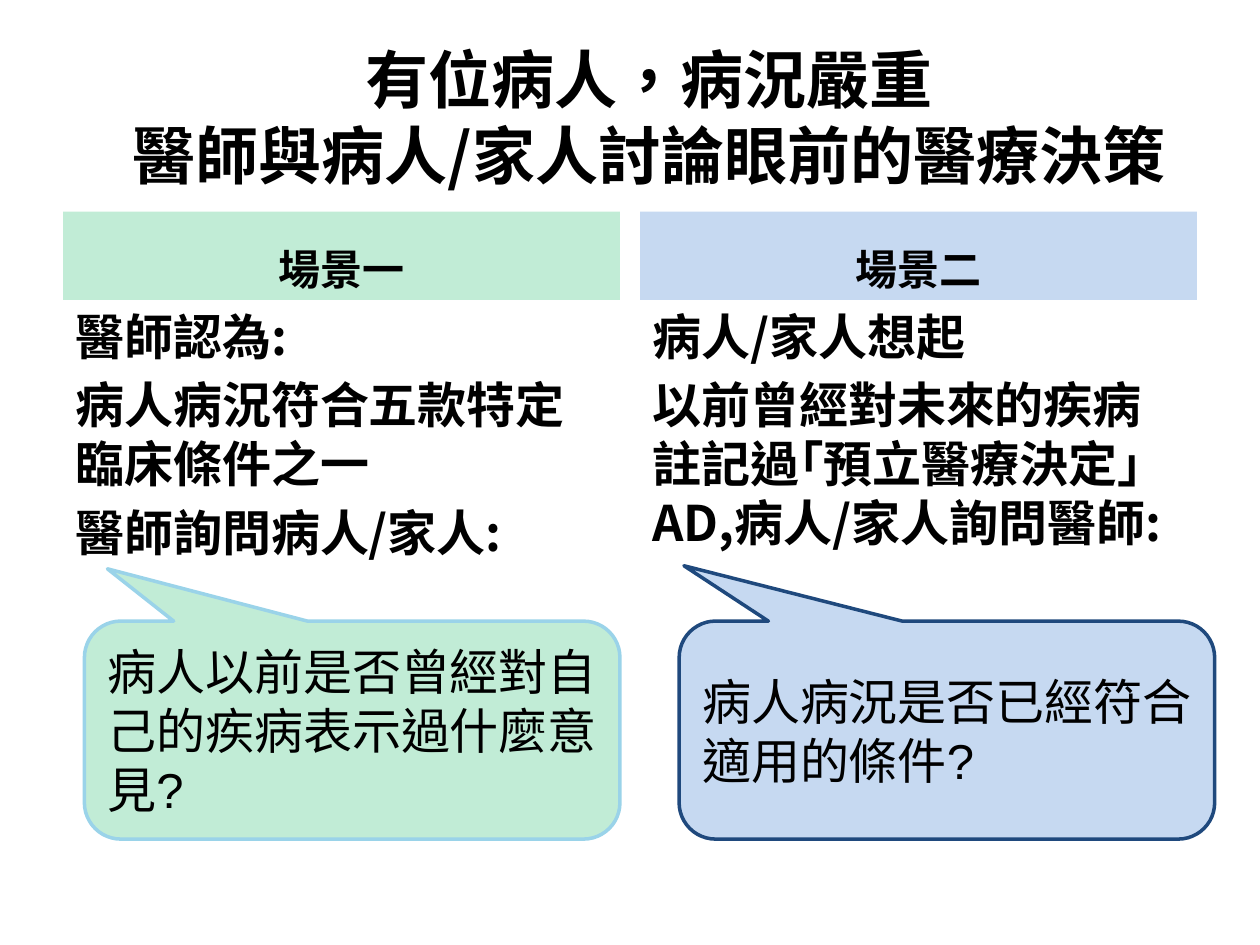
from copy import deepcopy

from pptx import Presentation
from pptx.dml.color import RGBColor
from pptx.enum.lang import MSO_LANGUAGE_ID
from pptx.enum.shapes import MSO_SHAPE
from pptx.enum.text import MSO_ANCHOR, MSO_AUTO_SIZE, PP_ALIGN
from pptx.oxml.ns import qn
from pptx.util import Inches, Pt

COLORS = {
    "text": "000000",
    "green": "C1ECD6",
    "green_edge": "9AD3E9",
    "blue": "C6D9F1",
    "blue_edge": "1F497D",
}
CJK_FONT = "Noto Sans CJK SC"
TITLE = "有位病人，病況嚴重\v醫師與病人/家人討論眼前的醫療決策"
COLUMN_WIDTH = 4.42
SCENES = [
    {
        "left": 0.5,
        "color": "green",
        "heading": "場景一",
        "story": ["醫師認為:", "病人病況符合五款特定臨床條件之一", "醫師詢問病人/家人:"],
        "question": "病人以前是否曾經對自己的疾病表示過什麼意見?",
        "callout_left": 0.67,
        "pointer": (-0.457, -0.74, 0.167),
    },
    {
        "left": 5.08,
        "color": "blue",
        "heading": "場景二",
        "story": ["病人/家人想起", "以前曾經對未來的疾病註記過｢預立醫療決定」AD,病人/家人詢問醫師:"],
        "question": "病人病況是否已經符合適用的條件?",
        "callout_left": 5.39,
        "pointer": (-0.491, -0.754, 0.167),
    },
]


def rgb(name):
    return RGBColor.from_string(COLORS[name])


def apply(target, values):
    for name, value in values.items():
        setattr(target, name, value)


def box(left, top, width, height):
    return [Inches(value) for value in (left, top, width, height)]


def format_run(run, size, font, bold):
    apply(run.font, {
        "size": Pt(size),
        "name": font,
        "bold": bold,
        "language_id": MSO_LANGUAGE_ID.TRADITIONAL_CHINESE,
    })
    run.font.color.rgb = rgb("text")
    properties = run._r.get_or_add_rPr()
    east_asian = properties.makeelement(qn("a:ea"), {"typeface": CJK_FONT})
    properties.find(qn("a:latin")).addnext(east_asian)


def write(shape, lines, size, anchor, align=PP_ALIGN.LEFT, before=0, font=CJK_FONT, bold=True):
    frame = shape.text_frame
    apply(frame, {
        "word_wrap": True,
        "auto_size": MSO_AUTO_SIZE.NONE,
        "vertical_anchor": anchor,
    })
    for index, line in enumerate(lines):
        paragraph = frame.add_paragraph() if index else frame.paragraphs[0]
        apply(paragraph, {"text": line, "alignment": align, "space_before": Pt(before)})
        for run in paragraph.runs:
            format_run(run, size, font, bold)
        for line_break in paragraph._p.findall(qn("a:br")):
            line_break.append(deepcopy(paragraph.runs[0]._r.rPr))


def add_title(slide):
    title = slide.shapes.title
    apply(title, dict(zip(("left", "top", "width", "height"), box(0.5, 0.3, 9.3, 1.25))))
    write(title, [TITLE], 36, MSO_ANCHOR.MIDDLE, PP_ALIGN.CENTER)


def add_filled(slide, preset, place, color):
    shape = slide.shapes.add_shape(preset, *place)
    shape.shadow.inherit = False
    shape.fill.solid()
    shape.fill.fore_color.rgb = rgb(color)
    return shape


def add_heading(slide, scene):
    place = box(scene["left"], 1.68, COLUMN_WIDTH, 0.7)
    heading = add_filled(slide, MSO_SHAPE.RECTANGLE, place, scene["color"])
    heading.line.fill.background()
    write(heading, [scene["heading"]], 24, MSO_ANCHOR.BOTTOM, PP_ALIGN.CENTER, 4.8)


def add_story(slide, scene):
    story = slide.shapes.add_textbox(*box(scene["left"], 2.38, COLUMN_WIDTH, 4.32))
    write(story, scene["story"], 28, MSO_ANCHOR.TOP, before=5.6)


def add_question(slide, scene):
    place = box(scene["callout_left"], 4.93, 4.25, 1.73)
    callout = add_filled(slide, MSO_SHAPE.ROUNDED_RECTANGULAR_CALLOUT, place, scene["color"])
    for index, value in enumerate(scene["pointer"]):
        callout.adjustments[index] = value
    callout.line.color.rgb = rgb(scene["color"] + "_edge")
    callout.line.width = Pt(2)
    write(callout, [scene["question"]], 28, MSO_ANCHOR.MIDDLE, font="Arial", bold=False)


def main():
    deck = Presentation()
    apply(deck, {"slide_width": Inches(10), "slide_height": Inches(7.5)})
    slide = deck.slides.add_slide(deck.slide_layouts[5])
    add_title(slide)
    for scene in SCENES:
        add_heading(slide, scene)
        add_story(slide, scene)
    for scene in SCENES:
        add_question(slide, scene)
    deck.save("out.pptx")


if __name__ == "__main__":
    main()
